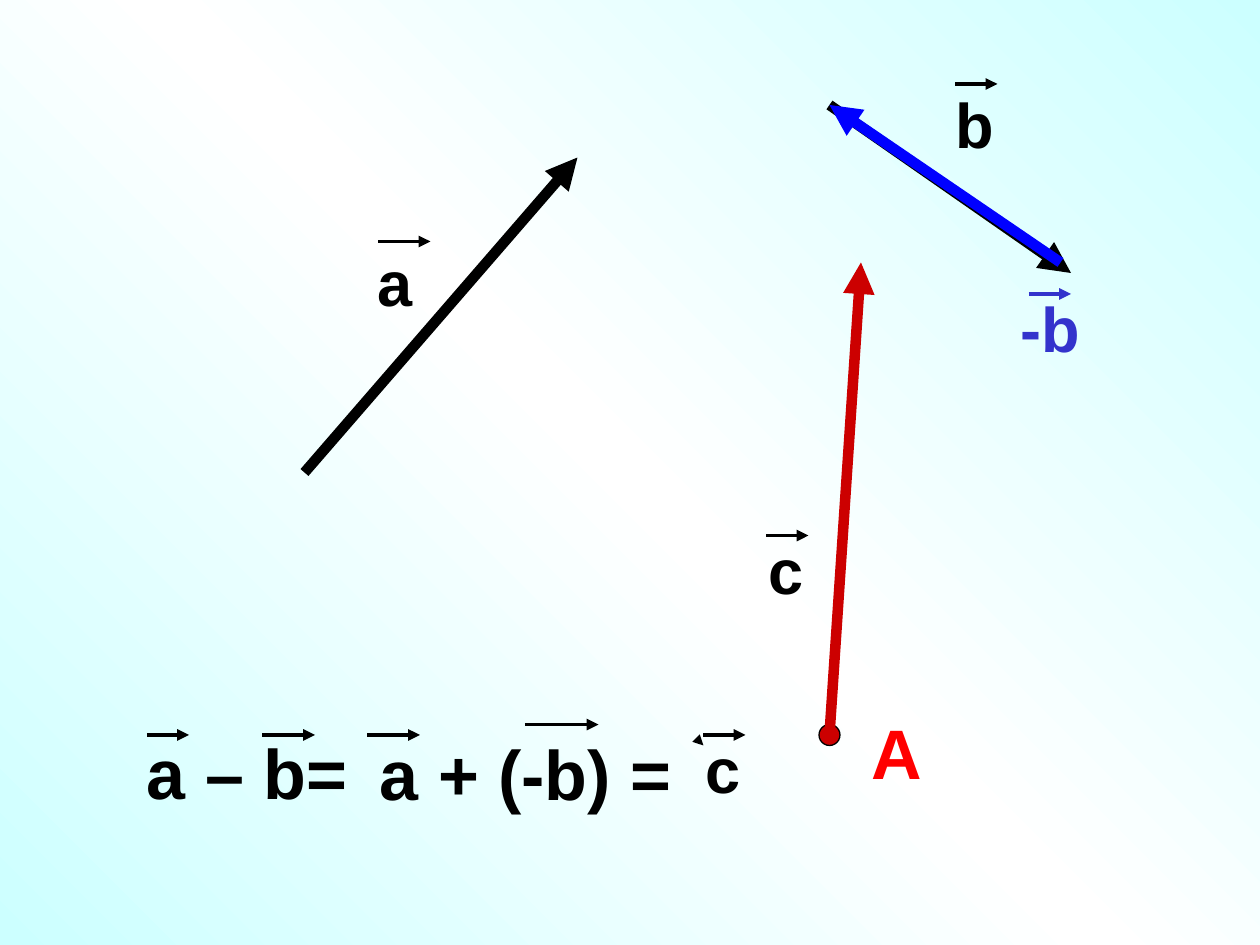
from copy import deepcopy

from lxml.etree import SubElement
from pptx import Presentation
from pptx.dml.color import RGBColor
from pptx.enum.shapes import MSO_CONNECTOR, MSO_SHAPE
from pptx.enum.text import MSO_AUTO_SIZE
from pptx.oxml.ns import qn
from pptx.util import Inches, Pt

CELL = 1 / 12  # the slide is a grid of 120 columns by 90 rows
BLACK, BLUE, VIOLET, CRIMSON, RED = "000000", "0000FF", "3333CC", "CC0000", "FF0000"


def color(hex_text):
    return RGBColor.from_string(hex_text)


def grid(*cells):
    return [Inches(cell * CELL) for cell in cells]


def paint_background(page):
    fill = page.background.fill
    fill.gradient()
    fill.gradient_angle = 45
    stop_list = page.element.find(".//" + qn("a:gsLst"))
    stop_list.insert(1, deepcopy(stop_list[0]))
    stops = zip(fill.gradient_stops, (0, 0.5, 1), ("CCFFFF", "FFFFFF", "CCFFFF"))
    for stop, position, shade in stops:
        stop.position = position
        stop.color.rgb = color(shade)


def add_arrow(shapes, start, end, shade=BLACK, width=6):
    arrow = shapes.add_connector(MSO_CONNECTOR.STRAIGHT, *grid(*start, *end))
    arrow.line.color.rgb = color(shade)
    arrow.line.width = Pt(width)
    SubElement(arrow.line._get_or_add_ln(), qn("a:tailEnd"), type="triangle")
    SubElement(arrow._element.spPr, qn("a:effectLst"))


def add_label(shapes, box, text, size=36, shade=BLACK):
    label = shapes.add_textbox(*grid(*box))
    frame = label.text_frame
    frame.word_wrap = False
    frame.auto_size = MSO_AUTO_SIZE.SHAPE_TO_FIT_TEXT
    frame.text = text
    font = frame.paragraphs[0].runs[0].font
    font.name, font.size, font.bold = "Arial", Pt(size), True
    font.color.rgb = color(shade)


def add_vector_name(page, box, text, bars, size=36, shade=BLACK):
    """Group a text with its over-arrows, each (column, row, length) from the box corner."""
    shapes = page.shapes.add_group_shape().shapes
    add_label(shapes, box, text, size, shade)
    for column, row, length in bars:
        left, top = box[0] + column, box[1] + row
        add_arrow(shapes, (left, top), (left + length, top), shade, 2.25)
    return shapes


def add_point(page, center, radius=1):
    left, top = center[0] - radius, center[1] - radius
    point = page.shapes.add_shape(
        MSO_SHAPE.OVAL, *grid(left, top, 2 * radius, 2 * radius))
    point.shadow.inherit = False
    point.fill.solid()
    point.fill.fore_color.rgb = color(CRIMSON)
    point.line.color.rgb = color(BLACK)
    point.line.width = Pt(0.75)


def draw_vectors(page):
    shapes = page.shapes
    origin = (79, 70)
    add_arrow(shapes, (79, 10), (102, 26))
    add_point(page, origin)
    add_arrow(shapes, (29, 45), (55, 15))
    add_arrow(shapes, (101, 25), (79, 10), BLUE)
    add_arrow(shapes, origin, (82, 25), CRIMSON)
    add_label(shapes, (81.8, 67, 7.2, 9.2), "А", 40, RED)
    add_vector_name(page, (34.8, 22.6, 5.8, 8.4), "a", [(1.2, 0.4, 5)])
    add_vector_name(page, (89.8, 7.6, 6.1, 8.4), "b", [(1.2, 0.4, 4)])
    add_vector_name(page, (96, 27, 8.4, 8.4), "-b", [(2, 1, 4)], shade=VIOLET)
    add_vector_name(page, (72, 50, 5.8, 8.4), "c", [(1, 1, 4)])


def write_equation(page):
    add_vector_name(page, (12.8, 68.9, 21.7, 9.2), "a – b=",
                    [(1.2, 1.1, 4), (12.2, 1.1, 5)], size=40)
    add_vector_name(page, (35, 69, 30.4, 9.2), "a + (-b) =",
                    [(0, 1, 5), (15, 0, 7)], size=40)
    result = add_vector_name(page, (66, 69, 5.8, 8.4), "c", [(1, 1, 4)])
    add_arrow(result, (66.4, 70.4), (67, 71), width=0.75)


def main():
    deck = Presentation()
    deck.slide_width, deck.slide_height = grid(120, 90)
    page = deck.slides.add_slide(deck.slide_layouts[6])
    paint_background(page)
    draw_vectors(page)
    write_equation(page)
    deck.save("out.pptx")


if __name__ == "__main__":
    main()
